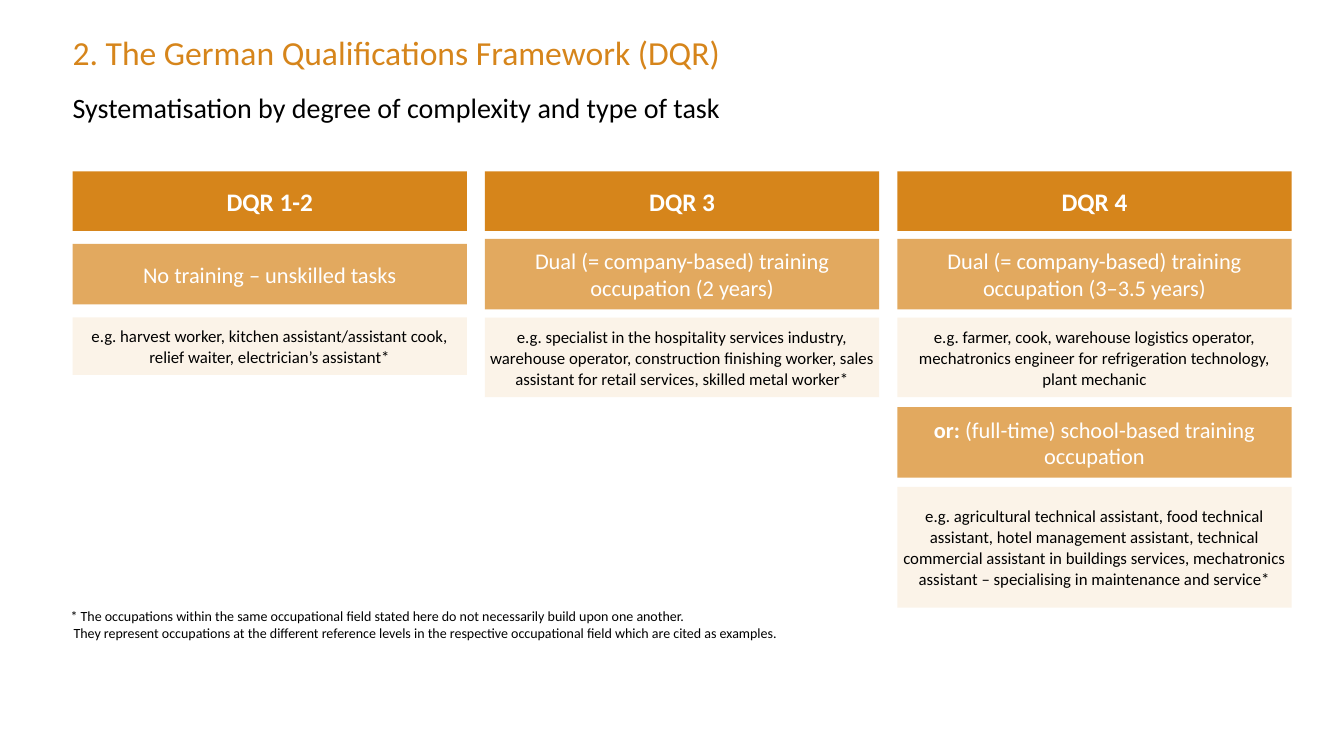
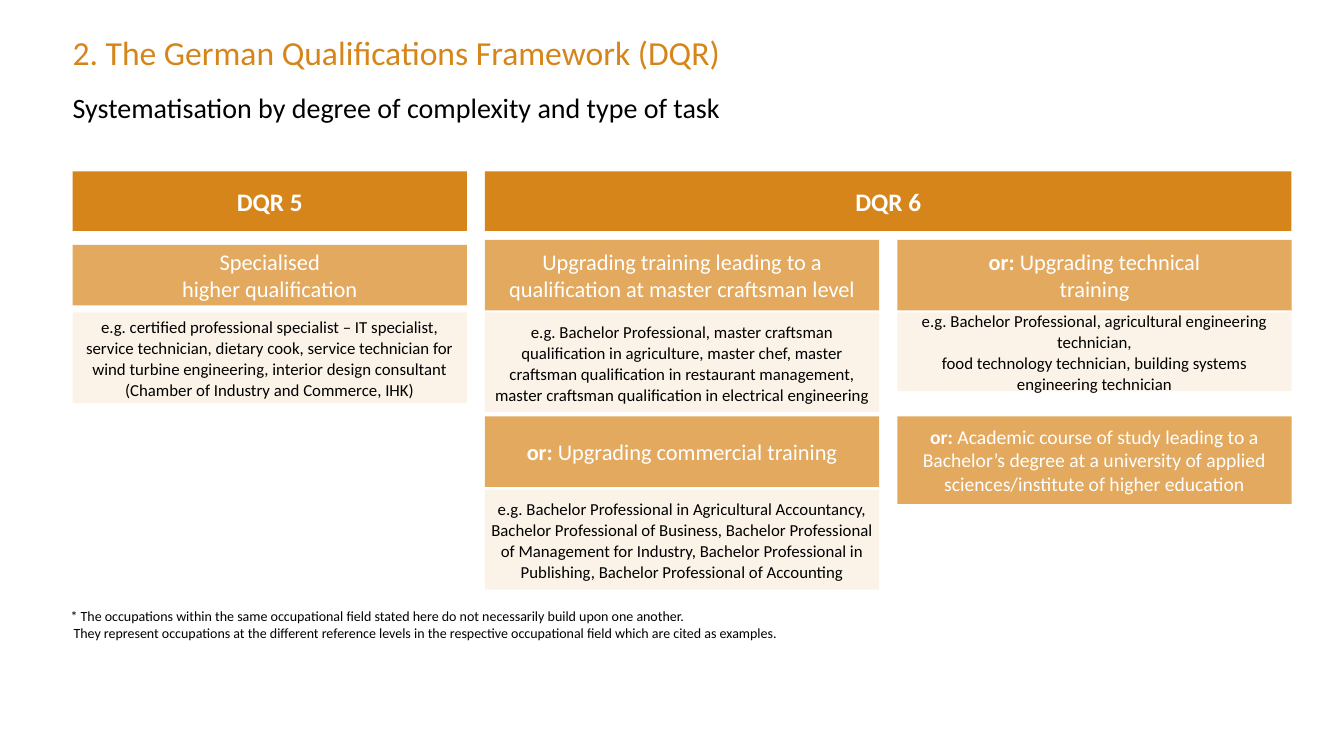
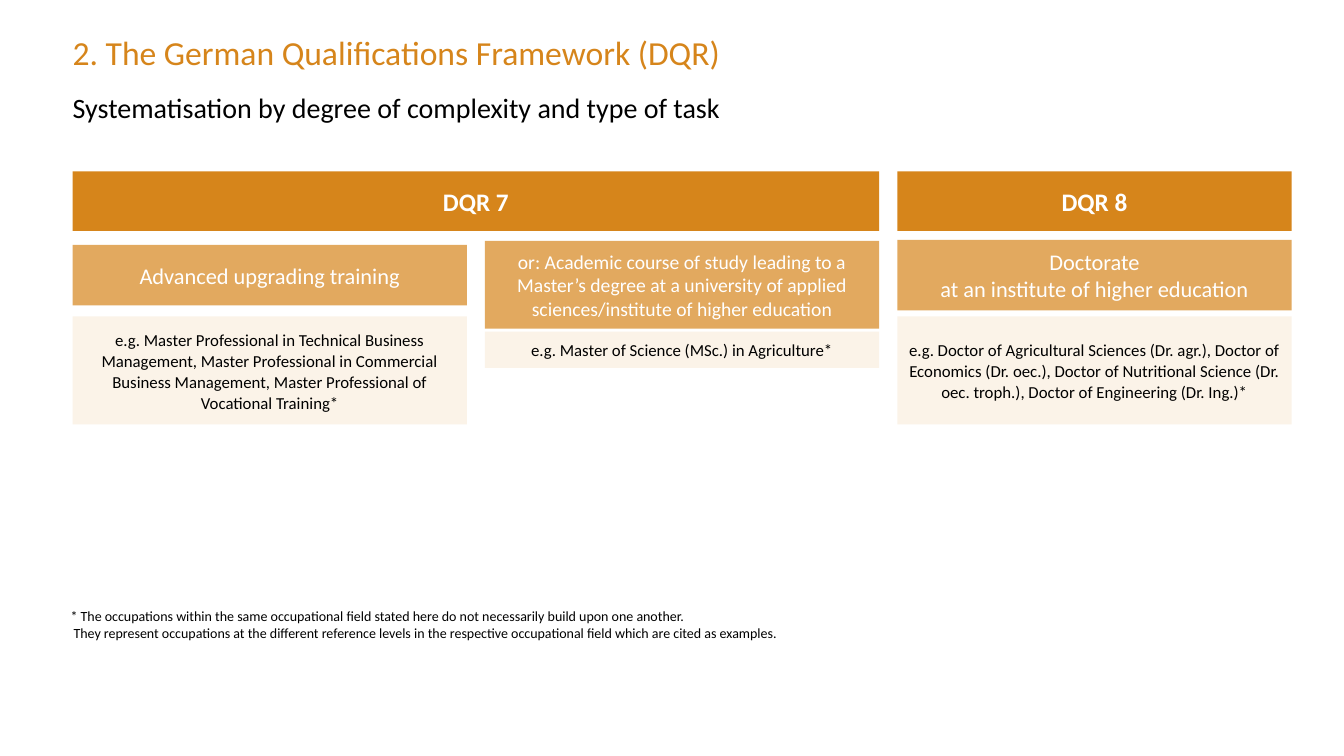
"""Build three slides on the levels of the German Qualifications Framework."""
from dataclasses import dataclass

import pptx
import pptx.dml.color
import pptx.enum.shapes
import pptx.enum.text
import pptx.util

Inches = pptx.util.Inches
Pt = pptx.util.Pt
Align = pptx.enum.text.PP_ALIGN
Anchor = pptx.enum.text.MSO_ANCHOR


@dataclass(frozen=True)
class Style:
    size: int
    color: str
    fill: str = ""
    bold: bool = False
    line_pt: int = 0
    bottom_inset: float = 0.08


class Theme:
    font = "Calibri"
    title = Style(24, "D6851B")
    subtitle = Style(20, "000000")
    footnote = Style(10, "000000")
    level = Style(18, "FFFFFF", "D6851B", True, 17, 0)
    training = Style(16, "FFFFFF", "E2A95F")
    study = Style(14, "FFFFFF", "E2A95F")
    examples = Style(12, "000000", "FBF3E8", line_pt=15)


LEFT, COLUMN_WIDTH, GAP = 0.72, 3.91, 0.18
LEVEL_TOP, LEVEL_HEIGHT = 1.7, 0.59

TITLE = "2. The German Qualifications Framework (DQR)"
SUBTITLE = "Systematisation by degree of complexity and type of task"
FOOTNOTE = (
    "* The occupations within the same occupational field stated here do not necessarily build upon one another.\n"
    "They represent occupations at the different reference levels in the respective occupational field "
    "which are cited as examples."
)

# PLACEHOLDER
SLIDES = [
    {
        "levels": [("DQR 1-2", 0, 1), ("DQR 3", 1, 1), ("DQR 4", 2, 1)],
        "boxes": [
            (Theme.training, 0, 2.42, 0.6, "", "No training – unskilled tasks"),
            (Theme.examples, 0, 3.15, 0.57, "",
             "e.g. harvest worker, kitchen assistant/assistant cook, relief waiter, electrician’s assistant*"),
            (Theme.training, 1, 2.37, 0.7, "", "Dual (= company-based) training occupation (2 years)"),
            (Theme.examples, 1, 3.15, 0.79, "",
             "e.g. specialist in the hospitality services industry, warehouse operator, construction finishing "
             "worker, sales assistant for retail services, skilled metal worker*"),
            (Theme.training, 2, 2.37, 0.7, "", "Dual (= company-based) training occupation (3–3.5 years)"),
            (Theme.examples, 2, 3.15, 0.79, "",
             "e.g. farmer, cook, warehouse logistics operator, mechatronics engineer for refrigeration "
             "technology, plant mechanic"),
            (Theme.training, 2, 4.04, 0.7, "or:", " (full-time) school-based training occupation"),
            (Theme.examples, 2, 4.83, 1.2, "",
             "e.g. agricultural technical assistant, food technical assistant, hotel management assistant, "
             "technical commercial assistant in buildings services, mechatronics assistant – specialising in "
             "maintenance and service*"),
        ],
    },
    {
        "levels": [("DQR 5", 0, 1), ("DQR 6", 1, 2)],
        "boxes": [
            (Theme.training, 0, 2.43, 0.6, "", "Specialised\nhigher qualification"),
            (Theme.examples, 0, 3.1, 0.9, "",
             "e.g. certified professional specialist – IT specialist, service technician, dietary cook, service "
             "technician for wind turbine engineering, interior design consultant (Chamber of Industry and "
             "Commerce, IHK)"),
            (Theme.training, 1, 2.38, 0.7, "",
             "Upgrading training leading to a\nqualification at master craftsman level"),
            (Theme.examples, 1, 3.1, 0.99, "",
             "e.g. Bachelor Professional, master craftsman qualification in agriculture, master chef, master "
             "craftsman qualification in restaurant management, master craftsman qualification in electrical "
             "engineering"),
            (Theme.training, 1, 4.13, 0.7, "or:", " Upgrading commercial training"),
            (Theme.examples, 1, 4.86, 0.99, "",
             "e.g. Bachelor Professional in Agricultural Accountancy, Bachelor Professional of Business, "
             "Bachelor Professional of Management for Industry, Bachelor Professional in Publishing, Bachelor "
             "Professional of Accounting"),
            (Theme.training, 2, 2.38, 0.7, "or:", " Upgrading technical\ntraining"),
            (Theme.examples, 2, 3.1, 0.78, "",
             "e.g. Bachelor Professional, agricultural engineering technician,\n"
             "food technology technician, building systems engineering technician"),
            (Theme.study, 2, 4.13, 0.87, "or:",
             " Academic course of study leading to a Bachelor’s degree at a university of applied "
             "sciences/institute of higher education"),
        ],
    },
    {
        "levels": [("DQR 7", 0, 2), ("DQR 8", 2, 1)],
        "boxes": [
            (Theme.training, 0, 2.43, 0.6, "", "Advanced upgrading training"),
            (Theme.examples, 0, 3.14, 1.07, "",
             "e.g. Master Professional in Technical Business Management, Master Professional in Commercial "
             "Business Management, Master Professional of Vocational Training*"),
            (Theme.study, 1, 2.39, 0.87, "",
             "or: Academic course of study leading to a Master’s degree at a university of applied "
             "sciences/institute of higher education"),
            (Theme.examples, 1, 3.29, 0.36, "", "e.g. Master of Science (MSc.) in Agriculture*"),
            (Theme.training, 2, 2.38, 0.7, "", "Doctorate\nat an institute of higher education"),
            (Theme.examples, 2, 3.14, 1.07, "",
             "e.g. Doctor of Agricultural Sciences (Dr. agr.), Doctor of Economics (Dr. oec.), Doctor of "
             "Nutritional Science (Dr. oec. troph.), Doctor of Engineering (Dr. Ing.)*"),
        ],
    },
]


def rgb(value):
    return pptx.dml.color.RGBColor.from_string(value)


def write(frame, style, text, lead=""):
    frame.word_wrap = True
    paragraph = frame.paragraphs[0]
    if lead:
        paragraph.add_run().text = lead
    for number, line in enumerate(text.split("\n")):
        if number:
            paragraph.add_line_break()
        paragraph.add_run().text = line
    for number, run in enumerate(paragraph.runs):
        run.font.name = Theme.font
        run.font.size = Pt(style.size)
        run.font.color.rgb = rgb(style.color)
        run.font.bold = style.bold or bool(lead and number == 0)
    return paragraph


def add_text(slide, style, left, top, width, height, text):
    frame = slide.shapes.add_textbox(Inches(left), Inches(top), Inches(width), Inches(height)).text_frame
    frame.margin_left = frame.margin_right = frame.margin_top = frame.margin_bottom = 0
    return write(frame, style, text)


def add_box(slide, style, column, top, height, lead, text, span=1):
    left = LEFT + column * (COLUMN_WIDTH + GAP)
    width = span * COLUMN_WIDTH + (span - 1) * GAP
    box = slide.shapes.add_shape(
        pptx.enum.shapes.MSO_SHAPE.RECTANGLE, Inches(left), Inches(top), Inches(width), Inches(height))
    box.shadow.inherit = False
    box.fill.solid()
    box.fill.fore_color.rgb = rgb(style.fill)
    box.line.fill.background()
    frame = box.text_frame
    frame.margin_left = frame.margin_right = Inches(0.04)
    frame.margin_top, frame.margin_bottom = Inches(0.08), Inches(style.bottom_inset)
    frame.vertical_anchor = Anchor.MIDDLE
    paragraph = write(frame, style, text, lead)
    paragraph.alignment = Align.CENTER
    if style.line_pt:
        paragraph.line_spacing = Pt(style.line_pt)


def add_frame(slide):
    add_text(slide, Theme.title, LEFT, 0.32, 9.84, 0.49, TITLE)
    add_text(slide, Theme.subtitle, LEFT, 0.9, 12.09, 0.48, SUBTITLE)
    footnote = add_text(slide, Theme.footnote, 0.7, 6.03, 7.9, 0.36, FOOTNOTE)
    hanging = Inches(0.03)
    properties = footnote._p.get_or_add_pPr()
    properties.set("marL", str(hanging))
    properties.set("indent", str(-hanging))


def main():
    deck = pptx.Presentation()
    deck.slide_width, deck.slide_height = Inches(13.33), Inches(7.5)
    for content in SLIDES:
        slide = deck.slides.add_slide(deck.slide_layouts[6])
        add_frame(slide)
        for name, column, span in content["levels"]:
            add_box(slide, Theme.level, column, LEVEL_TOP, LEVEL_HEIGHT, "", name, span)
        for box in content["boxes"]:
            add_box(slide, *box)
    deck.save("out.pptx")


if __name__ == "__main__":
    main()
